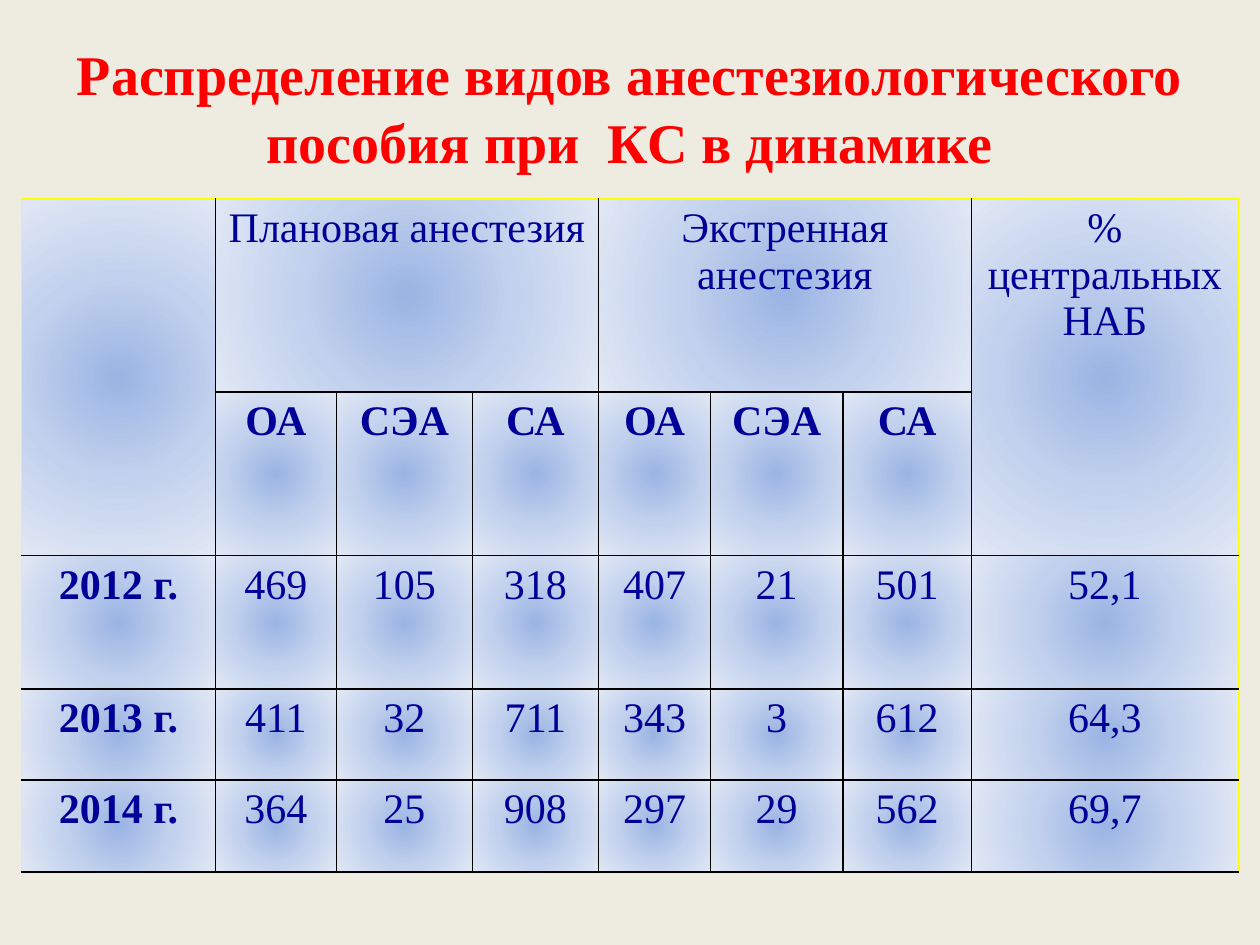
"""Build the slide on kinds of anaesthesia by year."""
from lxml import etree
from pptx import Presentation
from pptx.dml.color import RGBColor
from pptx.enum.text import MSO_ANCHOR as Anchor, PP_ALIGN as Align
from pptx.oxml import parse_xml
from pptx.oxml.ns import nsdecls, qn
from pptx.util import Inches, Pt

RED = RGBColor(0xFF, 0x00, 0x00)
NAVY = RGBColor(0x00, 0x00, 0x99)
BLACK = RGBColor(0x00, 0x00, 0x00)
YELLOW = RGBColor(0xFF, 0xFF, 0x00)
CREAM = RGBColor(0xEE, 0xEC, 0xE1)
GLOW = {
    0: RGBColor(0x9A, 0xB5, 0xE4),
    50: RGBColor(0xC2, 0xD1, 0xED),
    100: RGBColor(0xE1, 0xE8, 0xF5),
}

COLUMN_WIDTHS = [1.54, 0.96, 1.08, 1, 0.89, 1.05, 1.02, 2.12]
ROW_HEIGHTS = [1.53, 1.21, 1.06, 0.72, 0.73]
KINDS = ["ОА", "СЭА", "СА"]
ROWS = [
    ["", "Плановая анестезия", "", "", "Экстренная анестезия", "", "", "% центральных НАБ"],
    ["", *KINDS, *KINDS, ""],
    ["2012 г.", "469", "105", "318", "407", "21", "501", "52,1"],
    ["2013 г.", "411", "32", "711", "343", "3", "612", "64,3"],
    ["2014 г.", "364", "25", "908", "297", "29", "562", "69,7"],
]
MERGES = [(0, 0, 1, 0), (0, 1, 0, 3), (0, 4, 0, 6), (0, 7, 1, 7)]


def write(frame, text, size, color, bold):
    para = frame.paragraphs[0]
    para.alignment = Align.CENTER
    span = para.add_run()
    span.text = text
    span.font.color.rgb = color
    font_format = {"name": "Times New Roman", "size": Pt(size), "bold": bold}
    for name, value in font_format.items():
        setattr(span.font, name, value)


def paint(cell, edges):
    properties = cell._tc.get_or_add_tcPr()
    for side, color in edges.items():
        line = etree.SubElement(properties, qn(f"a:ln{side}"), w=str(Pt(1)))
        solid = etree.SubElement(line, qn("a:solidFill"))
        etree.SubElement(solid, qn("a:srgbClr"), val=str(color))
    stops = "".join(
        f'<a:gs pos="{place * 1000}"><a:srgbClr val="{color}"/></a:gs>'
        for place, color in GLOW.items()
    )
    properties.append(parse_xml(
        f'<a:gradFill {nsdecls("a")} rotWithShape="1"><a:gsLst>{stops}</a:gsLst>'
        '<a:path path="circle">'
        '<a:fillToRect l="50000" t="50000" r="50000" b="50000"/>'
        "</a:path></a:gradFill>"
    ))


deck = Presentation()
deck.slide_width, deck.slide_height = Inches(10), Inches(7.5)
page = deck.slides.add_slide(deck.slide_layouts[6])
page.background.fill.solid()
page.background.fill.fore_color.rgb = CREAM

title = page.shapes.add_textbox(Inches(0), Inches(0), Inches(10), Inches(1.7)).text_frame
for name, value in {"word_wrap": True, "vertical_anchor": Anchor.MIDDLE}.items():
    setattr(title, name, value)
write(title, "Распределение видов анестезиологического пособия при  КС в динамике", 32, RED, True)

table = page.shapes.add_table(
    len(ROW_HEIGHTS), len(COLUMN_WIDTHS),
    Inches(0.17), Inches(1.58), Inches(sum(COLUMN_WIDTHS)), Inches(sum(ROW_HEIGHTS)),
).table
for name in ("first_row", "horz_banding"):
    setattr(table, name, False)
for column, width in zip(table.columns, COLUMN_WIDTHS):
    column.width = Inches(width)
for row, height in zip(table.rows, ROW_HEIGHTS):
    row.height = Inches(height)
for top, left, bottom, right in MERGES:
    table.cell(top, left).merge(table.cell(bottom, right))

last = len(COLUMN_WIDTHS) - 1
for r, texts in enumerate(ROWS):
    for c, text in enumerate(texts):
        cell = table.cell(r, c)
        paint(cell, {
            "L": YELLOW if c == 0 else BLACK,
            "R": YELLOW if c == last else BLACK,
            "T": YELLOW if r == 0 else BLACK,
            "B": BLACK,
        })
        if text:
            write(cell.text_frame, text, 24, NAVY, r == 1 or c == 0)

deck.save("out.pptx")
